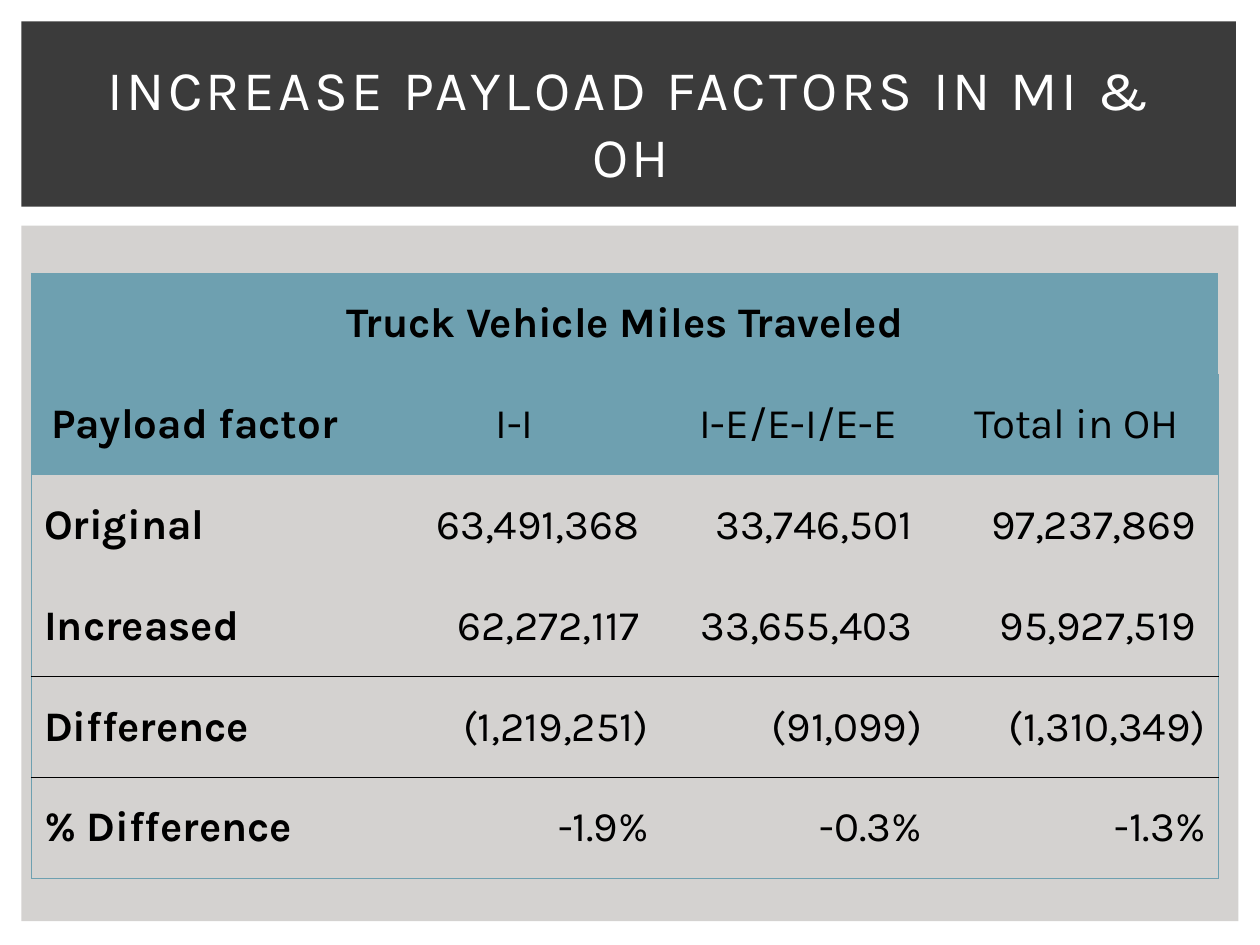
from dataclasses import dataclass

from lxml.etree import SubElement
from pptx import Presentation
from pptx.dml.color import RGBColor
from pptx.enum.shapes import MSO_SHAPE
from pptx.enum.text import MSO_ANCHOR, PP_ALIGN
from pptx.oxml.ns import qn
from pptx.util import Inches, Pt


@dataclass(frozen=True)
class Theme:
    font: str = "Karla"
    panel: str = "D4D2D0"
    banner: str = "3B3B3B"
    accent: str = "6EA0B0"
    dark: str = "000000"
    light: str = "FFFFFF"
    title_size: int = 32
    table_size: int = 24
    frame_width: float = 0.79
    rule_width: float = 1
    plain_table: str = "{2D5ABB26-0587-4C30-8999-92F81FD0307C}"


def write_text(frame, text, *, font, size, color, bold=False,
               align=PP_ALIGN.LEFT, spacing=0):
    frame.word_wrap = True
    paragraph = frame.paragraphs[0]
    paragraph.alignment = align
    run = paragraph.add_run()
    run.text = text
    run.font.name = font
    run.font.size = Pt(size)
    run.font.bold = bold
    run.font.color.rgb = RGBColor.from_string(color)
    if spacing:
        run.font._element.set("spc", str(int(spacing * 100)))


class SlideBuilder:
    def __init__(self, slide, theme):
        self.slide = slide
        self.theme = theme

    def rectangle(self, left, top, width, height, color):
        shape = self.slide.shapes.add_shape(
            MSO_SHAPE.RECTANGLE, Inches(left), Inches(top), Inches(width), Inches(height))
        shape.shadow.inherit = False
        shape.fill.solid()
        shape.fill.fore_color.rgb = RGBColor.from_string(color)
        shape.line.fill.background()

    def title(self, text, left, top, width, height):
        box = self.slide.shapes.add_textbox(
            Inches(left), Inches(top), Inches(width), Inches(height))
        box.text_frame.vertical_anchor = MSO_ANCHOR.MIDDLE
        write_text(box.text_frame, text, font=self.theme.font, size=self.theme.title_size,
                   color=self.theme.light, align=PP_ALIGN.CENTER, spacing=2)

    def border(self, cell, side, color, width):
        line = SubElement(cell._tc.get_or_add_tcPr(), qn(f"a:ln{side}"), w=str(Pt(width)))
        fill = SubElement(line, qn("a:solidFill"))
        SubElement(fill, qn("a:srgbClr"), val=color)

    def cell_borders(self, cell, row, column, last_row, last_column, ruled_rows):
        frame = (self.theme.accent, self.theme.frame_width)
        rule = (self.theme.dark, self.theme.rule_width)
        # Sides follow the order that the file format requires
        if column == 0:
            self.border(cell, "L", *frame)
        if column == last_column:
            self.border(cell, "R", *frame)
        if row == 0:
            self.border(cell, "T", *frame)
        elif row - 1 in ruled_rows:
            self.border(cell, "T", *rule)
        if row in ruled_rows:
            self.border(cell, "B", *rule)
        elif row == last_row:
            self.border(cell, "B", *frame)

    def table(self, rows, left, top, column_widths, row_height, header_rows, ruled_rows):
        table = self.slide.shapes.add_table(
            len(rows), len(column_widths), Inches(left), Inches(top),
            Inches(sum(column_widths)), Inches(row_height * len(rows))).table
        table.first_row = table.horz_banding = False
        table._tbl.tblPr.find(qn("a:tableStyleId")).text = self.theme.plain_table
        for column, width in zip(table.columns, column_widths):
            column.width = Inches(width)
        table.cell(0, 0).merge(table.cell(0, len(column_widths) - 1))

        for row, values in enumerate(rows):
            is_header = row < header_rows
            for column in range(len(column_widths)):
                cell = table.cell(row, column)
                cell.vertical_anchor = MSO_ANCHOR.MIDDLE
                self.cell_borders(cell, row, column, len(rows) - 1,
                                  len(column_widths) - 1, ruled_rows)
                if is_header:
                    cell.fill.solid()
                    cell.fill.fore_color.rgb = RGBColor.from_string(self.theme.accent)
                else:
                    cell.fill.background()
                if column >= len(values):
                    continue
                if is_header:
                    align = PP_ALIGN.CENTER
                else:
                    align = PP_ALIGN.RIGHT if column else PP_ALIGN.LEFT
                write_text(cell.text_frame, values[column], font=self.theme.font,
                           size=self.theme.table_size, color=self.theme.dark,
                           bold=column == 0, align=align)


def main():
    presentation = Presentation()
    presentation.slide_width = Inches(10)
    presentation.slide_height = Inches(7.5)
    theme = Theme()
    slide = presentation.slides.add_slide(presentation.slide_layouts[6])
    builder = SlideBuilder(slide, theme)

    # Background panel and title banner
    builder.rectangle(0.17, 1.79, 9.66, 5.52, theme.panel)
    builder.rectangle(0.17, 0.17, 9.64, 1.47, theme.banner)

    # Truck mileage table
    mileage = [
        ["Truck Vehicle Miles Traveled"],
        ["Payload factor ", "I-I", "I-E/E-I/E-E", "Total in OH"],
        ["Original", "63,491,368 ", "33,746,501 ", "97,237,869 "],
        ["Increased", "62,272,117 ", "33,655,403 ", "95,927,519 "],
        ["Difference", "(1,219,251)", "(91,099)", "(1,310,349)"],
        ["% Difference", "-1.9%", "-0.3%", "-1.3%"],
    ]
    builder.table(mileage, 0.25, 2.17, [2.67, 2.33, 2.17, 2.25], 0.8,
                  header_rows=2, ruled_rows={3, 4})

    # Title
    builder.title("INCREASE PAYLOAD FACTORS IN MI & OH", 0.42, 0.39, 9.17, 1.15)

    presentation.save("out.pptx")


if __name__ == "__main__":
    main()
